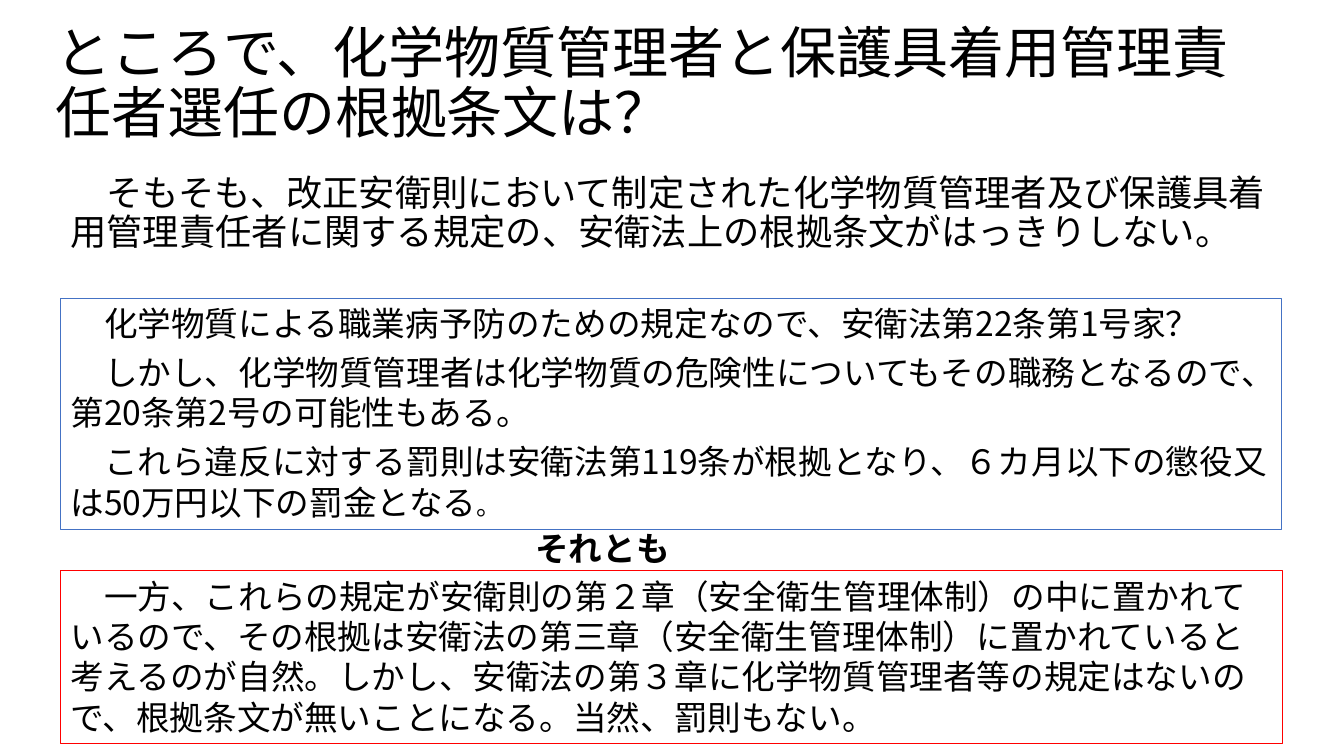
from lxml.etree import SubElement
from pptx import Presentation
from pptx.dml.color import RGBColor
from pptx.enum.shapes import MSO_SHAPE
from pptx.enum.text import MSO_ANCHOR, PP_ALIGN
from pptx.oxml.ns import qn
from pptx.util import Inches, Pt

FONT = "Noto Sans CJK JP"
BLACK = RGBColor(0x00, 0x00, 0x00)
BLUE = RGBColor(0x44, 0x72, 0xC4)
RED = RGBColor(0xFF, 0x00, 0x00)

# Content: each paragraph is a list of (text, size) runs
TITLE = [[("ところで、化学物質管理者と保護具着用管理責任者選任の根拠条文は？", 40)]]
LEAD = [[("　そもそも、改正安衛則において制定された化学物質管理者及び保護具着用管理責任者に関する規定の、"
          "安衛法上の根拠条文がはっきりしない。", 25.9)]]
FIRST_VIEW = [
    [("　化学物質による職業病予防のための規定なので、安衛法第22条第1号家？", 24)],
    [("　しかし、化学物質管理者は化学物質の危険性についてもその職務となるので、"
      "第20条第2号の可能性もある。", 24)],
    [("　これら違反に対する罰則は安衛法第119条が根拠となり、"
      "６カ月以下の懲役又は50万円以下の罰金となる", 24), ("。", 18)],
]
SECOND_VIEW = [[("　一方、これらの規定が安衛則の第２章（安全衛生管理体制）の中に置かれているので、"
                 "その根拠は安衛法の第三章（安全衛生管理体制）に置かれていると考えるのが自然。"
                 "しかし、安衛法の第３章に化学物質管理者等の規定はないので、"
                 "根拠条文が無いことになる。当然、罰則もない。", 24)]]
OR_ELSE = [[("それとも", 24)]]

# Text, position and format of each part, from back to front
PARTS = [
    (TITLE, (0.45, 0.12, 12.25, 1.45), dict(spacing=0.9, anchor=MSO_ANCHOR.MIDDLE)),
    (LEAD, (0.6, 1.69, 12.11, 0.98), dict(spacing=0.9, before=10)),
    (FIRST_VIEW, (0.6, 2.96, 12.11, 2.29), dict(before=6, border=BLUE)),
    (SECOND_VIEW, (0.6, 5.66, 12.12, 1.72), dict(before=6, border=RED)),
    (OR_ELSE, (5.21, 5.19, 2.09, 0.5), dict(bold=True)),
]


def add_text(slide, paragraphs, box, *, spacing=1.0, before=0, bold=False,
             anchor=MSO_ANCHOR.TOP, border=None):
    box = [Inches(v) for v in box]
    if border is None:
        sp = slide.shapes.add_textbox(*box)
    else:
        sp = slide.shapes.add_shape(MSO_SHAPE.RECTANGLE, *box)
        sp.shadow.inherit = False
        sp.fill.background()
        sp.line.color.rgb = border
        sp.line.width = Pt(0.75)
    tf = sp.text_frame
    tf.word_wrap = True
    tf.vertical_anchor = anchor
    for i, runs in enumerate(paragraphs):
        p = tf.add_paragraph() if i else tf.paragraphs[0]
        p.alignment = PP_ALIGN.LEFT
        p.line_spacing = spacing
        p.space_before = Pt(before)
        for text, size in runs:
            r = p.add_run()
            r.text = text
            r.font.name = FONT
            r.font.size = Pt(size)
            r.font.bold = bold
            r.font.color.rgb = BLACK
            # East Asian typeface
            SubElement(r.font._element, qn("a:ea"), typeface=FONT)


def main():
    prs = Presentation()
    prs.slide_width, prs.slide_height = Inches(13.33), Inches(7.5)
    slide = prs.slides.add_slide(prs.slide_layouts[6])
    for paragraphs, box, fmt in PARTS:
        add_text(slide, paragraphs, box, **fmt)
    prs.save("out.pptx")


if __name__ == "__main__":
    main()
